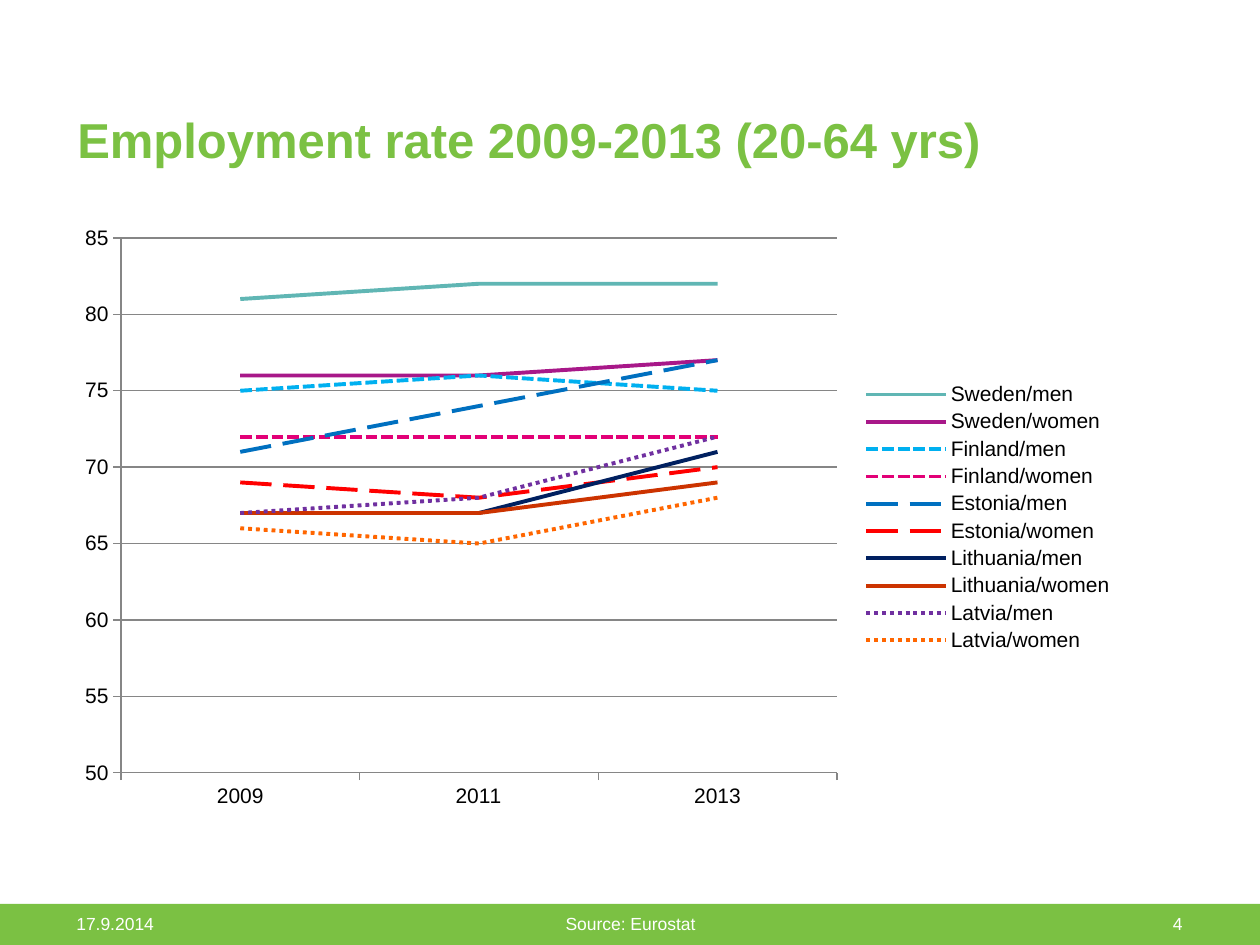
from lxml import etree
from pptx import Presentation
from pptx.chart.data import CategoryChartData
from pptx.dml.color import RGBColor
from pptx.enum.chart import XL_CHART_TYPE, XL_LEGEND_POSITION, XL_MARKER_STYLE, XL_TICK_MARK
from pptx.enum.dml import MSO_LINE
from pptx.enum.shapes import MSO_SHAPE
from pptx.enum.text import MSO_ANCHOR, PP_ALIGN
from pptx.oxml.ns import qn
from pptx.util import Pt

LEFT, MID, RIGHT = PP_ALIGN.LEFT, PP_ALIGN.CENTER, PP_ALIGN.RIGHT
BOTTOM, MIDDLE = MSO_ANCHOR.BOTTOM, MSO_ANCHOR.MIDDLE
SOLID, DASH = MSO_LINE.SOLID, MSO_LINE.SQUARE_DOT
LONG, DOT = MSO_LINE.LONG_DASH, MSO_LINE.ROUND_DOT
OUT = XL_TICK_MARK.OUTSIDE

# Content
TITLE = "Employment rate 2009-2013 (20-64 yrs)"
FOOTER = [  # text, box, alignment
    ("17.9.2014", (64, 908, 149, 30), LEFT),
    ("Source: Eurostat", (214, 908, 833, 30), MID),
    ("4", (1047, 908, 148, 30), RIGHT),
]
YEARS = ["2009", "2011", "2013"]
RATES = [  # name, values, colour, dash
    ("Sweden/men", (81, 82, 82), "60B6B4", SOLID),
    ("Sweden/women", (76, 76, 77), "A81889", SOLID),
    ("Finland/men", (75, 76, 75), "00B0F0", DASH),
    ("Finland/women", (72, 72, 72), "E20077", DASH),
    ("Estonia/men", (71, 74, 77), "0070C0", LONG),
    ("Estonia/women", (69, 68, 70), "FF0000", LONG),
    ("Lithuania/men", (67, 67, 71), "002060", SOLID),
    ("Lithuania/women", (67, 67, 69), "CC3300", SOLID),
    ("Latvia/men", (67, 68, 72), "7030A0", DOT),
    ("Latvia/women", (66, 65, 68), "FF6600", DOT),
]

THEME = {
    "font": "Arial", "green": "7BC143", "white": "FFFFFF", "black": "000000",
    "grid": "868686", "title": 28, "foot": 10, "label": 12, "line": 2.25,
}
PAGE = (1260, 945)
BAR = (0, 904, 1260, 41)
HEAD = (65, 36, 1131, 139)
CHART = (65, 215, 1062, 605)
PLOT = (121, 238, 716, 535)


def px(*sizes):
    return [int(n * 914400 / 126) for n in sizes]


def rgb(name):
    return RGBColor.from_string(THEME.get(name, name))


def style(font, size, color, bold=False):
    font.name, font.size, font.bold = THEME["font"], Pt(THEME[size]), bold
    font.color.rgb = rgb(color)


def add_text(slide, text, box, size, color, align=LEFT, anchor=MIDDLE, bold=False):
    frame = slide.shapes.add_textbox(*px(*box)).text_frame
    frame.word_wrap = True
    frame.vertical_anchor = anchor
    para = frame.paragraphs[0]
    para.alignment = align
    run = para.add_run()
    run.text = text
    style(run.font, size, color, bold)
    return para


def place_plot(chart):
    """Fix the inner plot area as fractions of the chart box."""
    area = chart.plots[0]._element.getparent()
    for old in area.findall(qn("c:layout")):
        area.remove(old)
    layout = etree.Element(qn("c:layout"))
    area.insert(0, layout)
    manual = etree.SubElement(layout, qn("c:manualLayout"))
    left, top, wide, high = CHART
    x, y, w, h = PLOT
    parts = [
        ("layoutTarget", "inner"), ("xMode", "edge"), ("yMode", "edge"),
        ("x", (x - left) / wide), ("y", (y - top) / high),
        ("w", w / wide), ("h", h / high),
    ]
    for tag, val in parts:
        text = val if isinstance(val, str) else f"{val:.4f}"
        etree.SubElement(manual, qn("c:" + tag)).set("val", text)


def add_rates(slide):
    data = CategoryChartData(number_format="0")
    data.categories = YEARS
    for name, vals, *_ in RATES:
        data.add_series(name, vals)
    chart = slide.shapes.add_chart(XL_CHART_TYPE.LINE, *px(*CHART), data).chart
    chart.has_title = False
    style(chart.font, "label", "black")
    chart.plots[0].vary_by_categories = False

    # Lines
    for series, (_, _, color, dash) in zip(chart.plots[0].series, RATES):
        series.smooth = False
        series.marker.style = XL_MARKER_STYLE.NONE
        line = series.format.line
        line.color.rgb = rgb(color)
        line.width = Pt(THEME["line"])
        line.dash_style = dash

    # Axes
    rates = chart.value_axis
    rates.minimum_scale, rates.maximum_scale, rates.major_unit = 50, 85, 5
    rates.has_major_gridlines = True
    for axis in (rates, chart.category_axis):
        axis.major_tick_mark = OUT
        style(axis.tick_labels.font, "label", "black")
    for part in (rates, chart.category_axis, rates.major_gridlines):
        part.format.line.color.rgb = rgb("grid")
        part.format.line.width = Pt(0.75)

    # Legend
    chart.has_legend = True
    chart.legend.position = XL_LEGEND_POSITION.RIGHT
    chart.legend.include_in_layout = False
    style(chart.legend.font, "label", "black")
    place_plot(chart)


def main():
    deck = Presentation()
    deck.slide_width, deck.slide_height = px(*PAGE)
    slide = deck.slides.add_slide(deck.slide_layouts[6])

    # Footer band
    bar = slide.shapes.add_shape(MSO_SHAPE.RECTANGLE, *px(*BAR))
    bar.shadow.inherit = False
    bar.fill.solid()
    bar.fill.fore_color.rgb = rgb("green")
    bar.line.fill.background()

    # Title, footer and chart
    head = add_text(slide, TITLE, HEAD, "title", "green", anchor=BOTTOM, bold=True)
    head.line_spacing = 0.85
    for text, box, align in FOOTER:
        add_text(slide, text, box, "foot", "white", align)
    add_rates(slide)
    deck.save("out.pptx")


if __name__ == "__main__":
    main()
